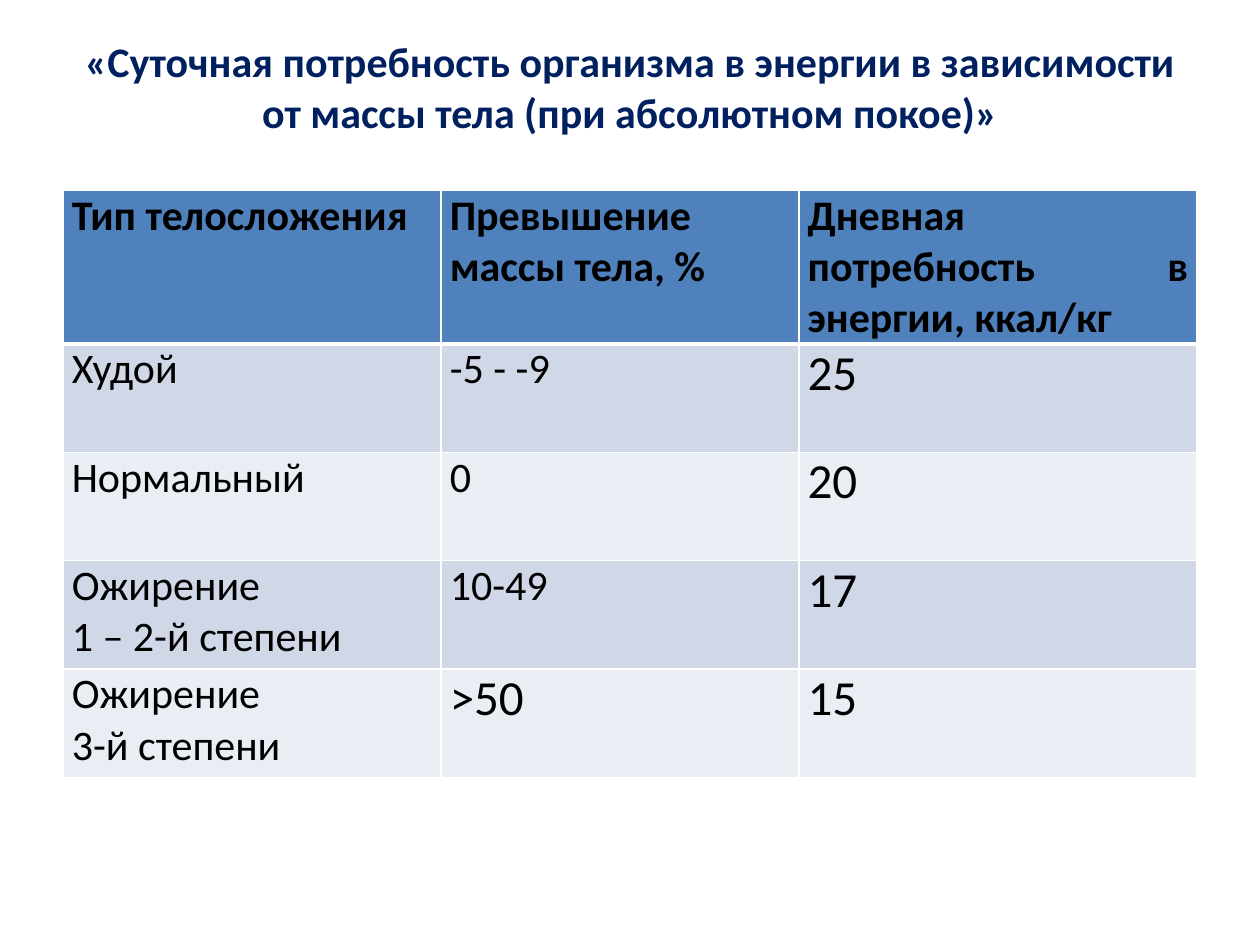
from typing import NamedTuple

from lxml import etree
from pptx import Presentation
from pptx.dml.color import RGBColor
from pptx.enum.text import MSO_ANCHOR, PP_ALIGN
from pptx.oxml.ns import qn
from pptx.util import Inches, Pt

CENTER, JUSTIFY = PP_ALIGN.CENTER, PP_ALIGN.JUSTIFY
MIDDLE = MSO_ANCHOR.MIDDLE
FONT = "Calibri"
COLORS = {
    "title": "002060",
    "text": "000000",
    "head": "4F81BD",
    "odd": "D0D8E8",
    "even": "E9EDF4",
    "line": "FFFFFF",
}
WIDTH, HEIGHT = Inches(10), Inches(7.5)
MARGIN = 0.05
COLS = (3, 2.84, 3.16)
ROWS = (1.16,) + (0.86,) * 4


class Entry(NamedTuple):
    lines: tuple[str, ...]
    size: int = 24


HEAD = (
    Entry(("Тип телосложения",)),
    Entry(("Превышение массы тела, %",)),
    Entry(("Дневная потребность в энергии, ккал/кг",)),
)
BODY = (
    (Entry(("Худой",)), Entry(("-5 - -9",)), Entry(("25",), 28)),
    (Entry(("Нормальный",)), Entry(("0",)), Entry(("20",), 28)),
    (Entry(("Ожирение ", "1 – 2-й степени")), Entry(("10-49",)), Entry(("17",), 28)),
    (Entry(("Ожирение ", "3-й степени ")), Entry((">50",), 28), Entry(("15",), 28)),
)


def write(frame, entry: Entry, align, color: str, bold: bool) -> None:
    for i, line in enumerate(entry.lines):
        para = frame.add_paragraph() if i else frame.paragraphs[0]
        para.alignment = align
        run = para.add_run()
        run.text = line
        font = run.font
        font.name, font.size, font.bold = FONT, Pt(entry.size), bold
        font.color.rgb = RGBColor.from_string(COLORS[color])


def outline(cell, top: int, bottom: int) -> None:
    """Draw the four cell borders; top and bottom widths are in points."""
    props = cell._tc.get_or_add_tcPr()
    for side, width in (("L", 1), ("R", 1), ("T", top), ("B", bottom)):
        line = etree.SubElement(props, qn(f"a:ln{side}"), w=str(Pt(width)))
        fill = etree.SubElement(line, qn("a:solidFill"))
        etree.SubElement(fill, qn("a:srgbClr"), val=COLORS["line"])


def add_title(slide) -> None:
    title = slide.shapes.title
    title.left, title.top = int(WIDTH * MARGIN), int(HEIGHT * 0.04)
    title.width, title.height = int(WIDTH * (1 - 2 * MARGIN)), Inches(0.77)
    frame = title.text_frame
    frame.word_wrap = True
    frame.vertical_anchor = MIDDLE
    text = ("«Суточная потребность организма в энергии в зависимости "
            "от массы тела (при абсолютном покое)»")
    write(frame, Entry((text,)), CENTER, "title", True)


def add_grid(slide) -> None:
    table = slide.shapes.add_table(
        len(ROWS), len(COLS), int(WIDTH * MARGIN), Inches(1.51),
        Inches(sum(COLS)), Inches(sum(ROWS))).table
    for col, width in zip(table.columns, COLS):
        col.width = Inches(width)
    for row, height in zip(table.rows, ROWS):
        row.height = Inches(height)
    for r, entries in enumerate((HEAD, *BODY)):
        shade = "head" if r == 0 else "odd" if r % 2 else "even"
        for c, entry in enumerate(entries):
            cell = table.cell(r, c)
            cell.margin_left = cell.margin_right = Inches(0.07)
            cell.margin_top = cell.margin_bottom = 0
            outline(cell, 3 if r == 1 else 1, 3 if r == 0 else 1)
            cell.fill.solid()
            cell.fill.fore_color.rgb = RGBColor.from_string(COLORS[shade])
            write(cell.text_frame, entry, JUSTIFY, "text", r == 0)


def main() -> None:
    deck = Presentation()
    deck.slide_width, deck.slide_height = WIDTH, HEIGHT
    slide = deck.slides.add_slide(deck.slide_layouts[5])
    add_title(slide)
    add_grid(slide)
    deck.save("out.pptx")


if __name__ == "__main__":
    main()
